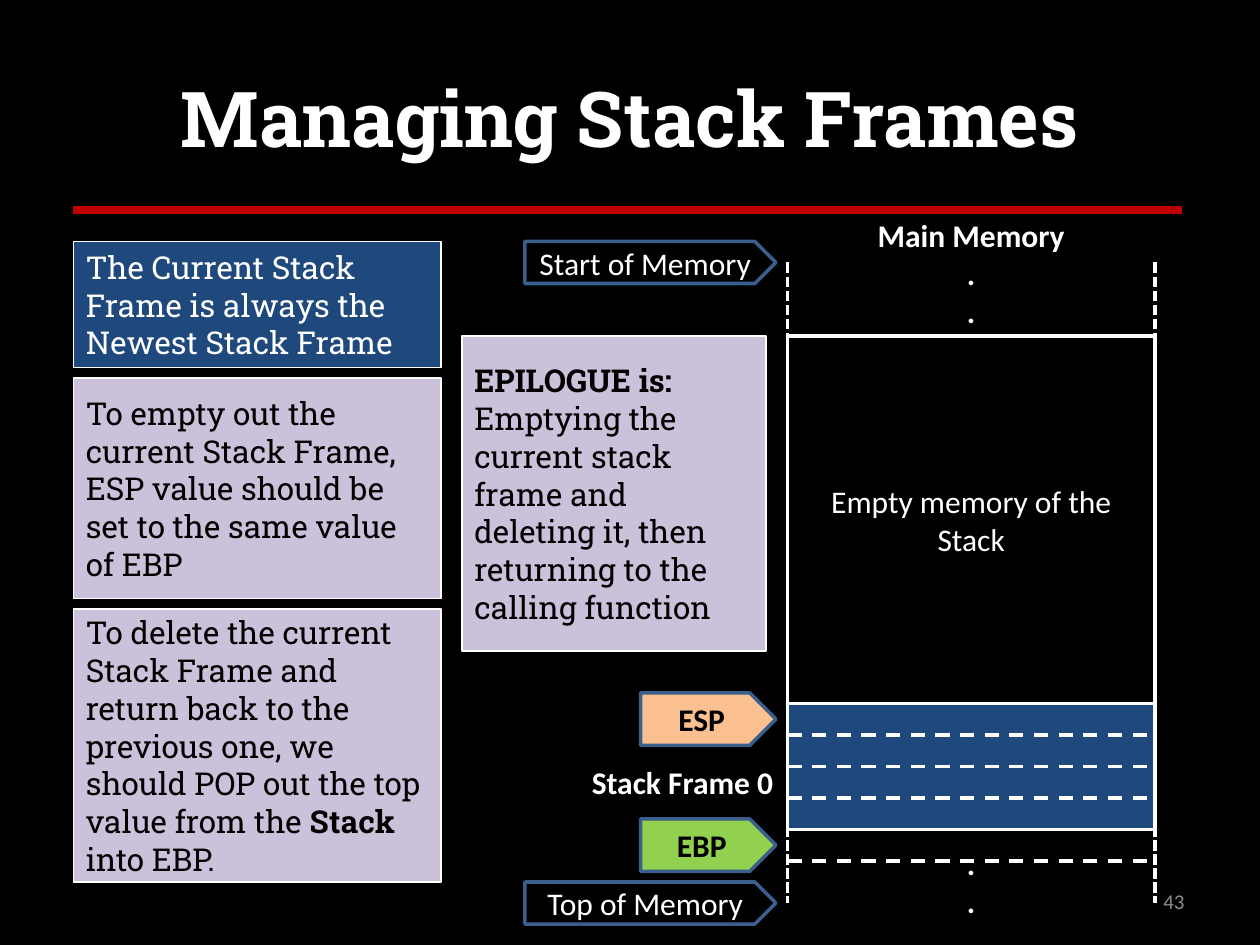
from typing import NamedTuple, Optional

from lxml import etree
from pptx import Presentation
from pptx import util as u
from pptx.dml.color import RGBColor
from pptx.enum import dml, shapes, text
from pptx.oxml.ns import qn

COLS, ROWS = 120, 90  # grid of the slide, twelve cells to the inch
WHITE, BLACK = "FFFFFF", "000000"
NAVY, LILAC, STEEL = "1F497D", "CCC1DA", "3A5F8C"
BODY, SLAB = "Calibri", "Roboto Slab"
MEM_X, MEM_W = 75, 35  # memory column
LEFT_X = 7
RECT, ARROW = shapes.MSO_SHAPE.RECTANGLE, shapes.MSO_SHAPE.PENTAGON
LEFT, CENTER, RIGHT = text.PP_ALIGN.LEFT, text.PP_ALIGN.CENTER, text.PP_ALIGN.RIGHT


class Area(NamedTuple):
    """Columns and rows of the grid."""
    x: float
    y: float
    w: float
    h: float


class Note(NamedTuple):
    area: Area
    paragraphs: list  # each one a list of (text, bold) runs
    fill: str = LILAC
    color: str = BLACK


class Pointer(NamedTuple):
    label: str
    area: Area
    fill: Optional[str] = None
    color: str = WHITE


prs = Presentation()
prs.slide_width, prs.slide_height = u.Inches(10), u.Inches(7.5)
s = prs.slides.add_slide(prs.slide_layouts[5])


def rgb(value: str) -> RGBColor:
    return RGBColor.from_string(value)


def gx(col: float) -> int:
    return round(prs.slide_width * col / COLS)


def gy(row: float) -> int:
    return round(prs.slide_height * row / ROWS)


def box(a: Area) -> tuple:
    return gx(a.x), gy(a.y), gx(a.w), gy(a.h)


def write(sp, paragraphs: list, *, size=18, font=BODY, color=WHITE,
          align=CENTER, margin: Optional[float] = None) -> None:
    tf = sp.text_frame
    tf.word_wrap = True
    tf.vertical_anchor = text.MSO_ANCHOR.MIDDLE
    if margin is not None:
        tf.margin_left = tf.margin_right = u.Inches(margin)
    for i, runs in enumerate(paragraphs):
        p = tf.paragraphs[0] if i == 0 else tf.add_paragraph()
        p.alignment = align
        for words, bold in runs:
            r = p.add_run()
            r.text = words
            r.font.size, r.font.name, r.font.bold = u.Pt(size), font, bold
            r.font.color.rgb = rgb(color)


def add_shape(kind, area: Area, fill: Optional[str], line: str, width: float):
    sp = s.shapes.add_shape(kind, *box(area))
    sp.shadow.inherit = False
    if fill:
        sp.fill.solid()
        sp.fill.fore_color.rgb = rgb(fill)
    else:
        sp.fill.background()
    sp.line.color.rgb, sp.line.width = rgb(line), u.Pt(width)
    return sp


def add_label(area: Area, paragraphs: list, **fmt) -> None:
    write(s.shapes.add_textbox(*box(area)), paragraphs, **fmt)


def add_line(x1: float, y1: float, x2: float, y2: float,
             color=WHITE, width=2.0, dash=None):
    ln = s.shapes.add_connector(shapes.MSO_CONNECTOR.STRAIGHT,
                                gx(x1), gy(y1), gx(x2), gy(y2))
    ln.line.color.rgb, ln.line.width = rgb(color), u.Pt(width)
    if dash is not None:
        ln.line.dash_style = dash
    etree.SubElement(ln._element.spPr, qn("a:effectLst"))
    return ln


def add_note(n: Note) -> None:
    sp = add_shape(RECT, n.area, n.fill, WHITE, 1)
    write(sp, n.paragraphs, font=SLAB, color=n.color, align=LEFT)


def add_pointer(pt: Pointer) -> None:
    sp = add_shape(ARROW, pt.area, pt.fill, STEEL, 2)
    write(sp, [[(pt.label, pt.fill is not None)]], color=pt.color, margin=0)


# Background, title and rule
s.background.fill.solid()
s.background.fill.fore_color.rgb = rgb(BLACK)
title = s.shapes.title
title.left, title.top, title.width, title.height = box(Area(6, 3.6, 108, 15))
write(title, [[("Managing Stack Frames", True)]], size=44, font=SLAB)
add_line(LEFT_X, 20, 112.6, 20, color="C00000", width=5)

# Memory column: empty part, open sides and stack frame
empty = add_shape(RECT, Area(MEM_X, 32, MEM_W, MEM_W), None, WHITE, 2)
write(empty, [[("Empty memory of the Stack", False)]])
dot = [(".", True)]
add_label(Area(MEM_X, 21, MEM_W, 10), [[("Main Memory", True)], dot, dot])
for x in (MEM_X, MEM_X + MEM_W):
    add_line(x, 25, x, 86, dash=dml.MSO_LINE.SQUARE_DOT)
frame = add_shape(RECT, Area(MEM_X, 67, MEM_W, 12), NAVY, WHITE, 2)
add_label(Area(MEM_X, 81, MEM_W, 6), [dot, dot])

# Word boundaries; the middle one is joined to the frame
for row in (70, 73, 76, 82):
    ln = add_line(MEM_X, row, MEM_X + MEM_W, row, dash=dml.MSO_LINE.DASH)
    if row == 73:
        ln.begin_connect(frame, 1)
        ln.end_connect(frame, 3)

# Pointers into memory
for pointer in (
    Pointer("Start of Memory", Area(50, 23, 23.9, 4)),
    Pointer("ESP", Area(61, 66, 12.9, 5), "FAC090", BLACK),
    Pointer("EBP", Area(61, 78, 12.9, 5), "92D050", BLACK),
    Pointer("Top of Memory", Area(50, 84, 23.9, 4)),
):
    add_pointer(pointer)
add_label(Area(55, 73, 20, 3), [[("Stack Frame 0", True)]], margin=0)

# Explanations
for note in (
    Note(Area(LEFT_X, 23, 35, 12),
         [[("The Current Stack Frame is always the Newest Stack Frame", False)]],
         NAVY, WHITE),
    Note(Area(LEFT_X, 36, 35, 21),
         [[("To empty out the current Stack Frame, ESP value should be set "
            "to the same value of EBP", False)]]),
    Note(Area(LEFT_X, 58, 35, 26),
         [[("To delete the current Stack Frame and return back to the previous "
            "one, we should POP out the top value from the ", False),
           ("Stack", True), (" into EBP.", False)]]),
    Note(Area(44, 32, 29, 30),
         [[("EPILOGUE is:", True)],
          [("Emptying the current stack frame and deleting it, then returning "
            "to the calling function", False)]]),
):
    add_note(note)

# Page number
add_label(Area(86, 83.4, 28, 4.8), [[("43", False)]],
          size=12, color="8C8C8C", align=RIGHT)

prs.save("out.pptx")
